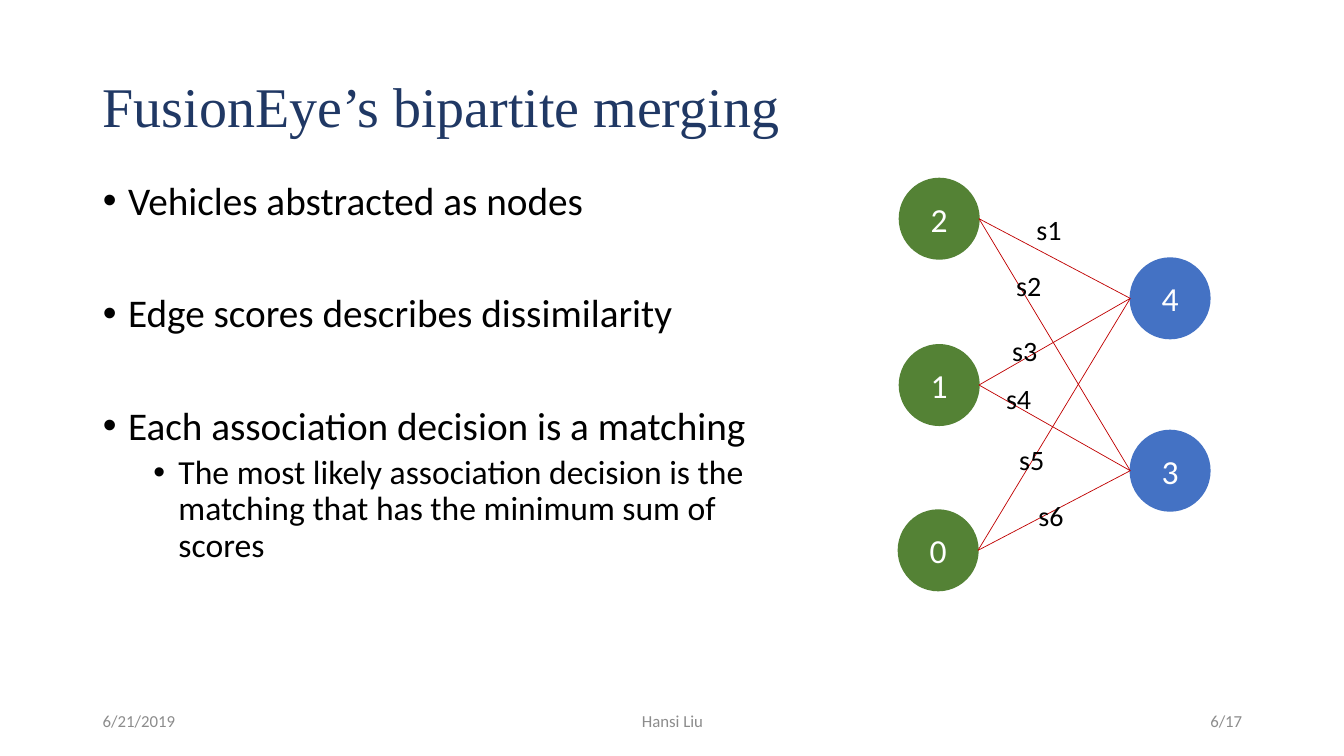
from typing import NamedTuple

from lxml import etree
from pptx import Presentation
from pptx import util as u
from pptx.dml.color import RGBColor
from pptx.enum import shapes, text
from pptx.oxml import ns

PX = 9144  # EMU per px, 100 px to the inch

NAVY = RGBColor(0x20, 0x38, 0x64)
BLACK = RGBColor(0x00, 0x00, 0x00)
WHITE = RGBColor(0xFF, 0xFF, 0xFF)
GRAY = RGBColor(0x8C, 0x8C, 0x8C)
GREEN = RGBColor(0x54, 0x82, 0x35)
BLUE = RGBColor(0x44, 0x72, 0xC4)
RED = RGBColor(0xC0, 0x00, 0x00)

LEFT, CENTER, RIGHT = (text.PP_ALIGN.LEFT, text.PP_ALIGN.CENTER,
                       text.PP_ALIGN.RIGHT)
TOP, MIDDLE = text.MSO_ANCHOR.TOP, text.MSO_ANCHOR.MIDDLE

NODE_WIDTH, NODE_HEIGHT = 79, 80


class Node(NamedTuple):
    label: str
    left: int
    top: int
    color: RGBColor

    @property
    def middle(self) -> int:
        return self.top + NODE_HEIGHT // 2


class Label(NamedTuple):
    words: str
    left: int
    top: int
    width: int
    align: text.PP_ALIGN = LEFT


class Bullet(NamedTuple):
    words: str
    level: int
    size: int
    space_before: int


GREEN_NODES = [
    Node("2", 892, 177, GREEN),
    Node("1", 892, 342, GREEN),
    Node("0", 891, 506, GREEN),
]
BLUE_NODES = [
    Node("4", 1121, 256, BLUE),
    Node("3", 1121, 427, BLUE),
]
SCORES = [
    Label("s1", 1018, 206, 112),
    Label("s2", 998, 261, 111),
    Label("s3", 994, 326, 140),
    Label("s4", 988, 374, 126),
    Label("s5", 1001, 434, 112),
    Label("s6", 1020, 490, 112),
]
FOOTERS = [
    Label("6/21/2019", 92, 695, 300),
    Label("Hansi Liu", 442, 695, 450, CENTER),
    Label("6/17", 942, 695, 300, RIGHT),
]
BULLETS = [
    Bullet("Vehicles abstracted as nodes", 0, 28, 0),
    Bullet("Edge scores describes dissimilarity", 0, 28, 50),
    Bullet("Each association decision is a matching", 0, 28, 50),
    Bullet("The most likely association decision is the matching "
           "that has the minimum sum of scores", 1, 24, 5),
]


def px(*lengths: int) -> list[u.Emu]:
    return [u.Emu(length * PX) for length in lengths]


def place(shape, left: int, top: int, width: int, height: int) -> None:
    shape.left, shape.top, shape.width, shape.height = px(
        left, top, width, height)


def format_paragraph(paragraph, words: str, *, size: int, color: RGBColor,
                     font: str = "Calibri", align=LEFT,
                     spacing: float = 1.0, before: int = 0) -> None:
    paragraph.text = words
    paragraph.alignment = align
    paragraph.line_spacing = spacing
    paragraph.space_before = u.Pt(before)
    paragraph.font.size = u.Pt(size)
    paragraph.font.name = font
    paragraph.font.color.rgb = color


def write(shape, words: str, *, anchor=MIDDLE, **style) -> None:
    """Fill a shape with one formatted paragraph."""
    frame = shape.text_frame
    frame.word_wrap = True
    frame.auto_size = text.MSO_AUTO_SIZE.NONE
    frame.vertical_anchor = anchor
    format_paragraph(frame.paragraphs[0], words, **style)


def add_bullet_mark(paragraph, level: int) -> None:
    paragraph.level = level
    properties = paragraph._p.get_or_add_pPr()
    indent = 25 * PX
    properties.set("marL", str(indent + level * 50 * PX))
    properties.set("indent", str(-indent))
    etree.SubElement(properties, ns.qn("a:buFont"), typeface="Arial")
    etree.SubElement(properties, ns.qn("a:buChar"), char="•")


def fill_body(body) -> None:
    place(body, 92, 175, 671, 500)
    frame = body.text_frame
    frame.word_wrap = True
    frame.auto_size = text.MSO_AUTO_SIZE.NONE
    frame.vertical_anchor = TOP
    for index, bullet in enumerate(BULLETS):
        paragraph = frame.add_paragraph() if index else frame.paragraphs[0]
        add_bullet_mark(paragraph, bullet.level)
        format_paragraph(paragraph, bullet.words, size=bullet.size,
                         color=BLACK, spacing=0.9,
                         before=bullet.space_before)


def add_node(slide, node: Node) -> None:
    circle = slide.shapes.add_shape(
        shapes.MSO_SHAPE.OVAL,
        *px(node.left, node.top, NODE_WIDTH, NODE_HEIGHT))
    circle.shadow.inherit = False
    circle.fill.solid()
    circle.fill.fore_color.rgb = node.color
    circle.line.color.rgb = node.color
    circle.line.width = u.Pt(1)
    write(circle, node.label, size=24, color=WHITE, align=CENTER)


def add_edge(slide, start: Node, end: Node) -> None:
    edge = slide.shapes.add_connector(
        shapes.MSO_CONNECTOR.STRAIGHT,
        *px(start.left + NODE_WIDTH, start.middle, end.left, end.middle))
    edge.line.color.rgb = RED
    edge.line.width = u.Pt(0.5)
    etree.SubElement(edge._element.spPr, ns.qn("a:effectLst"))


def add_label(slide, label: Label, height: int, **style) -> None:
    box = slide.shapes.add_textbox(
        *px(label.left, label.top, label.width, height))
    write(box, label.words, align=label.align, **style)


def main() -> None:
    presentation = Presentation()
    presentation.slide_width, presentation.slide_height = px(1333, 750)
    slide = presentation.slides.add_slide(presentation.slide_layouts[1])

    title = slide.shapes.title
    place(title, 92, 61, 1150, 96)
    write(title, "FusionEye’s bipartite merging", size=40, color=NAVY,
          font="Times New Roman", spacing=0.9)
    fill_body(slide.placeholders[1])

    for node in GREEN_NODES + BLUE_NODES:
        add_node(slide, node)
    for start in GREEN_NODES:
        for end in BLUE_NODES:
            add_edge(slide, start, end)
    for score in SCORES:
        add_label(slide, score, 44, size=20, color=BLACK, anchor=TOP)
    for footer in FOOTERS:
        add_label(slide, footer, 40, size=12, color=GRAY)

    presentation.save("out.pptx")


if __name__ == "__main__":
    main()
